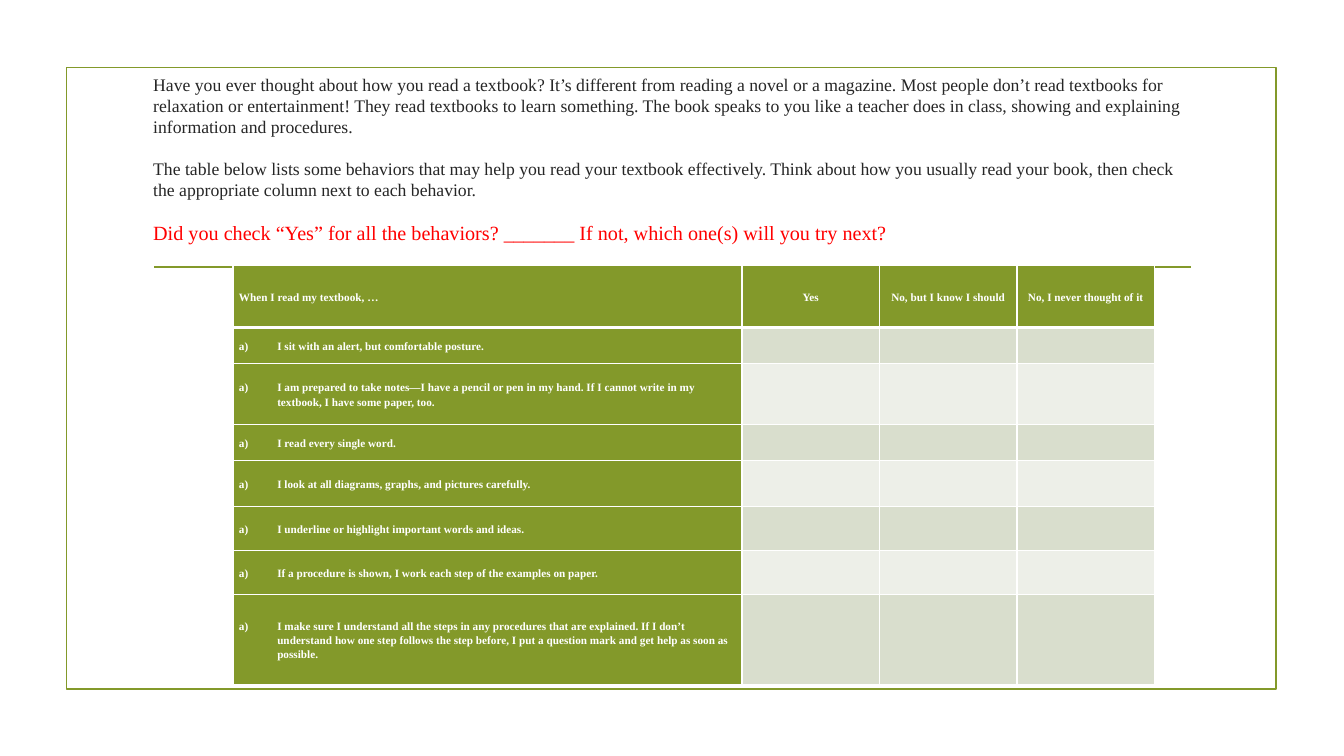
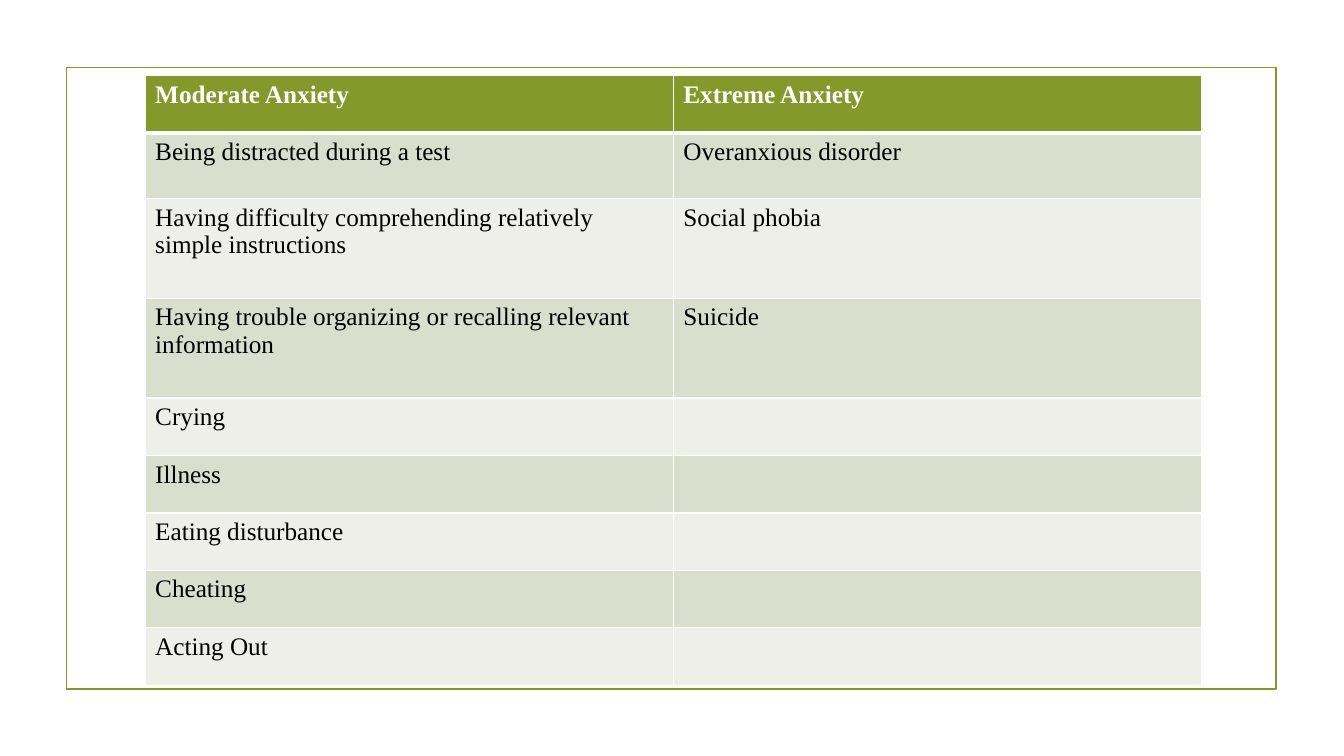
from dataclasses import dataclass

from lxml.etree import SubElement
from pptx import Presentation
from pptx.dml.color import RGBColor
from pptx.enum.shapes import MSO_CONNECTOR, MSO_SHAPE
from pptx.enum.text import MSO_ANCHOR, MSO_AUTO_SIZE, PP_ALIGN
from pptx.oxml.ns import qn
from pptx.util import Inches, Pt

COLORS = {
    "olive": "83992A",
    "dark band": "D9DECD",
    "light band": "EDEFE8",
    "white": "FFFFFF",
    "black": "000000",
    "body": "262626",
    "red": "FF0000",
}
FONT = "Times New Roman"
WIDTH, HEIGHT = Inches(13.33), Inches(7.5)
TITLE_ONLY, BLANK = 5, 6


@dataclass(frozen=True)
class TableStyle:
    """Lengths are percentages of the slide; margins are in inches."""
    left: float
    top: float
    columns: list[float]
    rows: list[float]
    size: float
    side_margin: float = 0.1
    end_margin: float = 0.05
    anchor: MSO_ANCHOR = MSO_ANCHOR.TOP
    spacing: float = 1.0
    checklist: bool = False


@dataclass(frozen=True)
class TitlePart:
    text: str
    size: float
    color: str
    line_height: float
    space_before: float = 0


TITLE_PARTS = [
    TitlePart(
        "Have you ever thought about how you read a textbook? It’s different from "
        "reading a novel or a magazine. Most people don’t read textbooks for "
        "relaxation or entertainment! They read textbooks to learn something. The "
        "book speaks to you like a teacher does in class, showing and explaining "
        "information and procedures.", 12.6, "body", 15.1),
    TitlePart(
        "The table below lists some behaviors that may help you read your textbook "
        "effectively. Think about how you usually read your book, then check the "
        "appropriate column next to each behavior.", 12.6, "body", 15.1, 15),
    TitlePart(
        "Did you check “Yes” for all the behaviors? _______ If not, which one(s) "
        "will you try next?", 14.4, "red", 17.3, 14.5),
]

BEHAVIORS = [
    ["When I read my textbook, …", "Yes", "No, but I know I should",
     "No, I never thought of it"],
    ["I sit with an alert, but comfortable posture."],
    ["I am prepared to take notes—I have a pencil or pen in my hand. If I cannot "
     "write in my textbook, I have some paper, too."],
    ["I read every single word."],
    ["I look at all diagrams, graphs, and pictures carefully."],
    ["I underline or highlight important words and ideas."],
    ["If a procedure is shown, I work each step of the examples on paper."],
    ["I make sure I understand all the steps in any procedures that are explained. "
     "If I don’t understand how one step follows the step before, I put a question "
     "mark and get help as soon as possible."],
]
BEHAVIOR_STYLE = TableStyle(
    left=17.33, top=35.07, columns=[37.88] + [10.23] * 3,
    rows=[8.27, 4.73, 8.13, 4.73, 6.07, 5.8, 5.87, 11.93],
    size=8, side_margin=0.06, end_margin=0, anchor=MSO_ANCHOR.MIDDLE,
    spacing=1.15, checklist=True)

ANXIETY = [
    ["Moderate Anxiety", "Extreme Anxiety"],
    ["Being distracted during a test", "Overanxious disorder"],
    ["Having difficulty comprehending relatively simple instructions",
     "Social phobia"],
    ["Having trouble organizing or recalling relevant information", "Suicide"],
    ["Crying"],
    ["Illness"],
    ["Eating disturbance"],
    ["Cheating"],
    ["Acting Out"],
]
ANXIETY_STYLE = TableStyle(
    left=10.8, top=10, columns=[39.3] * 2,
    rows=[7.6, 8.67, 13.2, 13.2] + [7.6] * 5, size=18)


def across(share: float) -> int:
    return round(WIDTH * share / 100)


def down(share: float) -> int:
    return round(HEIGHT * share / 100)


def color(name: str) -> RGBColor:
    return RGBColor.from_string(COLORS[name])


def write(para, text: str, *, size: float, ink: str, bold: bool = False) -> None:
    span = para.add_run()
    span.text = text
    span.font.name = FONT
    span.font.size = Pt(size)
    span.font.bold = bold
    span.font.color.rgb = color(ink)


def add_slide(deck, layout: int):
    """Add a slide with the olive frame and rule behind its content."""
    slide = deck.slides.add_slide(deck.slide_layouts[layout])
    frame = slide.shapes.add_shape(
        MSO_SHAPE.RECTANGLE, across(4.95), down(8.93), across(90.02), down(82.27))
    frame.shadow.inherit = False
    frame.fill.background()
    rule = slide.shapes.add_connector(
        MSO_CONNECTOR.STRAIGHT, across(11.48), down(35.33), across(88.6), down(35.33))
    SubElement(rule.element.spPr, qn("a:effectLst"))
    for outline in (frame.line, rule.line):
        outline.color.rgb = color("olive")
        outline.width = Pt(1.25)
    return slide


def fill_title(slide, parts: list[TitlePart]) -> None:
    title = slide.shapes.title
    title.left, title.top = across(10.65), down(9.75)
    title.width, title.height = across(78.77), down(23.5)
    box = title.text_frame
    box.word_wrap = True
    box.auto_size = MSO_AUTO_SIZE.NONE
    box.vertical_anchor = MSO_ANCHOR.TOP
    box.margin_top = box.margin_bottom = 0
    for index, part in enumerate(parts):
        para = box.add_paragraph() if index else box.paragraphs[0]
        para.alignment = PP_ALIGN.LEFT
        para.line_spacing = Pt(part.line_height)
        para.space_before = Pt(part.space_before)
        write(para, part.text, size=part.size, ink=part.color)


def add_borders(cell, row: int) -> None:
    """White cell borders, heavier between the header and the body."""
    properties = cell._tc.get_or_add_tcPr()
    heavy = {(0, "lnB"), (1, "lnT")}
    for side in ("lnL", "lnR", "lnT", "lnB"):
        points = 3 if (row, side) in heavy else 1
        line = SubElement(properties, qn(f"a:{side}"), w=str(Pt(points)))
        paint = SubElement(line, qn("a:solidFill"))
        SubElement(paint, qn("a:srgbClr"), val=COLORS["white"])


def add_letter(para) -> None:
    """Hanging a) numbering."""
    properties = para._p.get_or_add_pPr()
    indent = Inches(0.38)
    properties.set("marL", str(indent))
    properties.set("indent", str(-indent))
    SubElement(properties, qn("a:buFont"), typeface="+mj-lt")
    SubElement(properties, qn("a:buAutoNum"), type="alphaLcParenR")


def format_cell(cell, text: str, row: int, column: int, style: TableStyle) -> None:
    header = row == 0
    strong = header or (style.checklist and column == 0)
    add_borders(cell, row)
    cell.fill.solid()
    band = "dark band" if row % 2 else "light band"
    cell.fill.fore_color.rgb = color("olive" if strong else band)
    cell.margin_left = cell.margin_right = Inches(style.side_margin)
    cell.margin_top = cell.margin_bottom = Inches(style.end_margin)
    cell.vertical_anchor = style.anchor
    if not text:
        return
    para = cell.text_frame.paragraphs[0]
    if style.checklist and not header:
        add_letter(para)
    if style.checklist and column:
        para.alignment = PP_ALIGN.CENTER
    para.line_spacing = style.spacing
    write(para, text, size=style.size, ink="white" if strong else "black", bold=strong)


def add_table(slide, content: list[list[str]], style: TableStyle) -> None:
    table = slide.shapes.add_table(
        len(style.rows), len(style.columns), across(style.left), down(style.top),
        across(sum(style.columns)), down(sum(style.rows))).table
    for column, share in zip(table.columns, style.columns):
        column.width = across(share)
    for row, share in zip(table.rows, style.rows):
        row.height = down(share)
    for row, texts in enumerate(content):
        for column in range(len(style.columns)):
            text = texts[column] if column < len(texts) else ""
            format_cell(table.cell(row, column), text, row, column, style)


def main() -> None:
    deck = Presentation()
    deck.slide_width, deck.slide_height = WIDTH, HEIGHT

    # Reading behaviors checklist
    reading = add_slide(deck, TITLE_ONLY)
    fill_title(reading, TITLE_PARTS)
    add_table(reading, BEHAVIORS, BEHAVIOR_STYLE)

    # Levels of anxiety
    anxiety = add_slide(deck, BLANK)
    add_table(anxiety, ANXIETY, ANXIETY_STYLE)

    deck.save("out.pptx")


if __name__ == "__main__":
    main()
